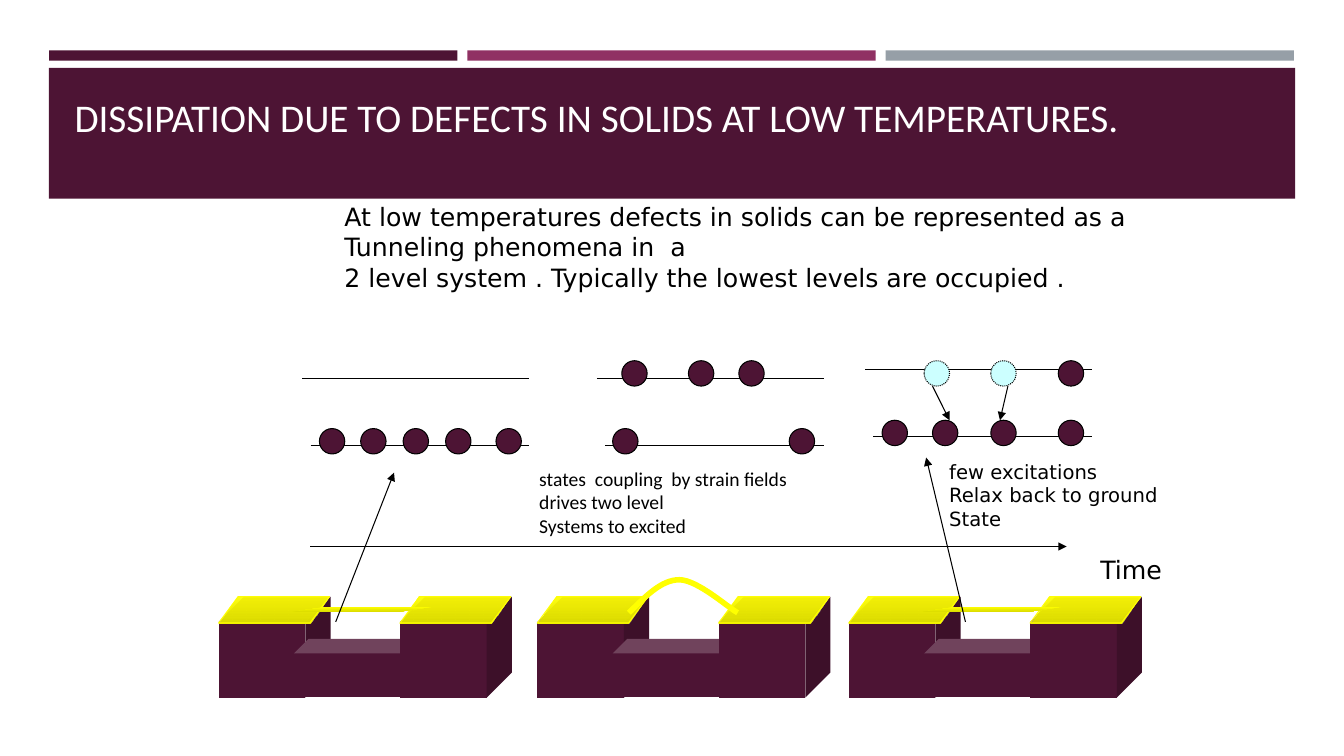
"""Builds the slide on dissipation caused by two level defects in solids."""
from lxml import etree
from pptx import Presentation
from pptx.dml.color import RGBColor
from pptx.enum.dml import MSO_LINE
from pptx.enum.shapes import MSO_CONNECTOR, MSO_SHAPE
from pptx.enum.text import MSO_ANCHOR, MSO_AUTO_SIZE
from pptx.oxml.ns import qn
from pptx.util import Cm, Pt

COLORS = {
    "plum": "4D1434", "magenta": "903163", "slate": "969FA7",
    "yellow": "FFFF00", "olive": "DCDC00", "ice": "CCFFFF",
    "black": "000000", "white": "FFFFFF",
}
DOT = 0.64


def rgb(name):
    return RGBColor.from_string(COLORS[name])


class DefectSlide:
    def __init__(self, slide, font="DejaVu Sans", line_width=0.75):
        self.shapes = slide.shapes
        self.font = font
        self.line_width = line_width

    def text(self, lines, left, top, width, height, *, size=18, font=None,
             color="black", wrap=False, anchor=MSO_ANCHOR.TOP, bottom=0.13,
             grow=True):
        frame = self.shapes.add_textbox(
            Cm(left), Cm(top), Cm(width), Cm(height)).text_frame
        frame.word_wrap = wrap
        frame.auto_size = MSO_AUTO_SIZE.SHAPE_TO_FIT_TEXT if grow else MSO_AUTO_SIZE.NONE
        frame.vertical_anchor = anchor
        frame.margin_bottom = Cm(bottom)
        frame.text = "\n".join(lines)
        for paragraph in frame.paragraphs:
            paragraph.font.size = Pt(size)
            paragraph.font.name = font or self.font
            paragraph.font.color.rgb = rgb(color)

    def solid(self, kind, left, top, width, height, fill, line=None):
        solid = self.shapes.add_shape(kind, Cm(left), Cm(top), Cm(width), Cm(height))
        solid.shadow.inherit = False
        solid.fill.solid()
        solid.fill.fore_color.rgb = rgb(fill)
        if line:
            solid.line.color.rgb = rgb(line)
            solid.line.width = Pt(self.line_width)
        else:
            solid.line.fill.background()
        return solid

    def line(self, start, end, arrow=False):
        line = self.shapes.add_connector(
            MSO_CONNECTOR.STRAIGHT, *(Cm(value) for value in (*start, *end)))
        line.line.color.rgb = rgb("black")
        line.line.width = Pt(self.line_width)
        if arrow:
            etree.SubElement(line.line._get_or_add_ln(), qn("a:tailEnd"), type="triangle")
        etree.SubElement(line._element.spPr, qn("a:effectLst"))

    def dot(self, left, top, excited=False):
        dot = self.solid(MSO_SHAPE.OVAL, left, top, DOT, DOT,
                         "ice" if excited else "plum", "black")
        if excited:
            dot.line.dash_style = MSO_LINE.ROUND_DOT

    def levels(self, left, upper, lower, width=5.72):
        right = left + width
        self.line((left, upper), (right, upper))
        self.line((left + 0.21, lower), (right, lower))

    def gold(self, left, top, width, height, slant, line=None, alpha=None):
        gold = self.solid(MSO_SHAPE.PARALLELOGRAM, left, top, width, height, "yellow", line)
        gold.adjustments[0] = slant
        gold.fill.gradient()
        gold.fill.gradient_angle = 270
        for stop, name in zip(gold.fill.gradient_stops, ("yellow", "olive")):
            stop.color.rgb = rgb(name)
        if alpha:
            first = gold._element.spPr.find(".//" + qn("a:srgbClr"))
            etree.SubElement(first, qn("a:alpha"), val=str(alpha * 1000))

    def resonator(self, left):
        for offset, top, width, height in (
                (0, 15.04, 2.82, 2.54), (1.9, 16.1, 3.38, 1.47), (4.57, 15.04, 2.82, 2.54)):
            cube = self.solid(MSO_SHAPE.CUBE, left + offset, top, width, height, "plum")
            cube.adjustments[0] = 0.25
        for offset in (0, 4.57):
            self.gold(left + offset, 15.04, 2.79, 0.66, 0.74, line="yellow", alpha=92)

    def curve(self, start, points, color, width):
        builder = self.shapes.build_freeform(Cm(start[0]), Cm(start[1]))
        builder.add_line_segments([(Cm(x), Cm(y)) for x, y in points], close=False)
        curve = builder.convert_to_shape()
        outline = curve._element.spPr.find(".//" + qn("a:path"))
        segments = outline.findall(qn("a:lnTo"))
        for first in range(0, len(segments), 3):
            bend = etree.SubElement(outline, qn("a:cubicBezTo"))
            for segment in segments[first:first + 3]:
                bend.append(segment[0])
                outline.remove(segment)
        curve.shadow.inherit = False
        curve.fill.background()
        curve.line.color.rgb = rgb(color)
        curve.line.width = Pt(width)


def main():
    deck = Presentation()
    deck.slide_width, deck.slide_height = Cm(33.87), Cm(19.05)
    page = DefectSlide(deck.slides.add_slide(deck.slide_layouts[6]))

    for column, color in enumerate(("plum", "magenta", "slate")):
        page.solid(MSO_SHAPE.RECTANGLE, 1.24 + 10.54 * column, 1.27, 10.29, 0.26, color)
    page.solid(MSO_SHAPE.RECTANGLE, 1.23, 1.71, 31.41, 3.3, "plum")
    page.text(["DISSIPATION DUE TO DEFECTS IN SOLIDS AT LOW TEMPERATURES."],
              1.63, 1.96, 30.63, 2.82, size=28, font="Calibri", color="white",
              wrap=True, anchor=MSO_ANCHOR.BOTTOM, bottom=1.24, grow=False)
    page.text(["At low temperatures defects in solids can be represented as a",
               "Tunneling phenomena in  a",
               "2 level system . Typically the lowest levels are occupied ."],
              8.43, 4.95, 21.23, 2.57)

    for left, upper, lower in ((7.62, 9.53, 11.23), (15.04, 9.53, 11.23), (21.8, 9.32, 11)):
        page.levels(left, upper, lower)
    for top, lefts in (
            (9.09, (15.67, 17.35, 18.62, 26.67)),
            (10.8, (8.05, 9.09, 10.16, 11.23, 12.5, 15.44, 19.89)),
            (10.59, (22.23, 23.5, 24.97, 26.67))):
        for left in lefts:
            page.dot(left, top)
    for left in (23.29, 24.97):
        page.dot(left, 9.09, excited=True)

    for left in (5.51, 13.54, 21.39):
        page.resonator(left)
    for left in (7.37, 23.24):
        page.gold(left, 15.29, 3.53, 0.13, 6.675)
    page.curve((15.85, 15.44),
               [(16.26, 15.04), (16.66, 14.61), (17.12, 14.61),
                (17.58, 14.61), (18.36, 15.32), (18.59, 15.44)], "yellow", 4)

    for start, end in (
            ((7.82, 13.77), (26.88, 13.77)),
            ((8.46, 15.67), (9.93, 11.91)),
            ((24.33, 15.67), (23.34, 11.53)),
            ((23.5, 9.73), (23.93, 10.59)),
            ((25.4, 9.73), (25.2, 10.59))):
        page.line(start, end, arrow=True)

    page.text(["Time"], 27.48, 13.84, 2.08, 1.02)
    page.text(["states  coupling  by strain fields", "drives two level",
               "Systems to excited"],
              13.34, 11.63, 9.17, 2.06, size=14, font="Calibri", wrap=True)
    page.text(["few excitations", "Relax back to ground", "State"],
              23.67, 11.46, 5.99, 2.64, size=14)
    deck.save("out.pptx")


if __name__ == "__main__":
    main()
